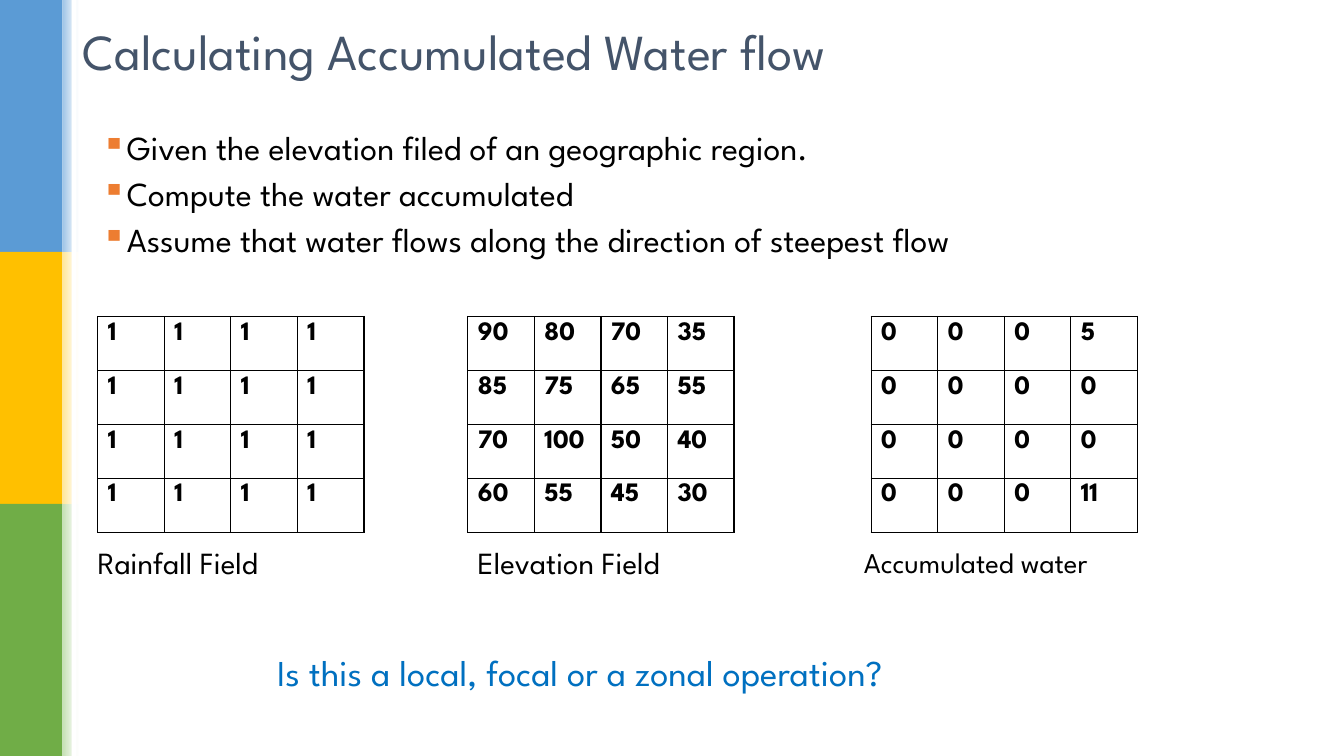
from pptx import Presentation
from pptx import util as u
from pptx.dml.color import RGBColor
from pptx.enum import shapes, text
from pptx.oxml.ns import qn
from lxml import etree

FONT = "League Spartan"
BLACK, WHITE = "000000", "FFFFFF"
BANDS = [("5B9BD5", "9DC3E6"), ("FFC000", "FFE699"), ("70AD47", "C5E0B4")]
BULLETS = [
    "Given the elevation filed of an geographic region.",
    "Compute the water accumulated",
    "Assume that water flows along the direction of steepest flow",
]
RAINFALL = [[1] * 4 for _ in range(4)]
ELEVATION = [[90, 80, 70, 35], [85, 75, 65, 55], [70, 100, 50, 40], [60, 55, 45, 30]]
ACCUMULATED = [[0, 0, 0, 5], [0] * 4, [0] * 4, [0, 0, 0, 11]]


def colour(value):
    return RGBColor.from_string(value)


def inches(box):
    return [u.Inches(length) for length in box]


def add_span(para, wording, size, ink=BLACK, bold=False):
    span = para.add_run()
    span.text = wording
    span.font.name = FONT
    span.font.size = u.Pt(size)
    span.font.bold = bold
    span.font.color.rgb = colour(ink)


def add_rectangle(page, box, fill, fade=None):
    bar = page.shapes.add_shape(shapes.MSO_SHAPE.RECTANGLE, *inches(box))
    bar.shadow.inherit = False
    bar.line.fill.background()
    if fade:
        bar.fill.gradient()
        bar.fill.gradient_angle = 0
        for stop, shade in zip(bar.fill.gradient_stops, (fill, fade)):
            stop.color.rgb = colour(shade)
    else:
        bar.fill.solid()
        bar.fill.fore_color.rgb = colour(fill)


def add_sidebar(page, box):
    left, top, width, height = box
    band_height = height / len(BANDS)
    for index, (solid, pale) in enumerate(BANDS):
        band_top = top + index * band_height
        add_rectangle(page, (left, band_top, width, band_height), solid)
        add_rectangle(page, (left + width, band_top, 0.16, band_height), pale, WHITE)
    add_rectangle(page, (left + width + 0.09, top, 0.05, height), WHITE)


def add_title(page, box, wording):
    title = page.shapes.title
    title.left, title.top, title.width, title.height = inches(box)
    frame = title.text_frame
    frame.vertical_anchor = text.MSO_ANCHOR.MIDDLE
    para = frame.paragraphs[0]
    para.alignment = text.PP_ALIGN.LEFT
    add_span(para, wording, 36, "44546A")


def add_text(page, box, lines, size, ink=BLACK, spacing=0.9, bulleted=False):
    frame = page.shapes.add_textbox(*inches(box)).text_frame
    frame.word_wrap = True
    for index, line in enumerate(lines):
        para = frame.paragraphs[0] if index == 0 else frame.add_paragraph()
        para.line_spacing = spacing
        if index:
            para.space_before = u.Pt(0.3 * size)
        if bulleted:
            add_bullet(para)
        add_span(para, line, size, ink)


def add_bullet(para):
    properties = para._p.get_or_add_pPr()
    properties.set("marL", str(u.Inches(0.25)))
    properties.set("indent", str(-u.Inches(0.25)))
    tint = etree.SubElement(properties, qn("a:buClr"))
    etree.SubElement(tint, qn("a:srgbClr"), val="ED7D31")
    etree.SubElement(properties, qn("a:buChar"), char="▪")


def add_borders(cell):
    properties = cell._tc.get_or_add_tcPr()
    for position, side in enumerate(("a:lnL", "a:lnR", "a:lnT", "a:lnB")):
        line = etree.Element(qn(side), w=str(u.Pt(1)))
        fill = etree.SubElement(line, qn("a:solidFill"))
        etree.SubElement(fill, qn("a:srgbClr"), val=BLACK)
        properties.insert(position, line)


def add_field(page, box, values):
    grid = page.shapes.add_table(len(values), len(values[0]), *inches(box)).table
    grid.first_row = grid.horz_banding = False
    for row, numbers in enumerate(values):
        for column, number in enumerate(numbers):
            cell = grid.cell(row, column)
            cell.fill.solid()
            cell.fill.fore_color.rgb = colour(WHITE)
            add_borders(cell)
            add_span(cell.text_frame.paragraphs[0], str(number), 19, bold=True)


def main():
    deck = Presentation()
    deck.slide_width, deck.slide_height = u.Inches(13.33), u.Inches(7.5)
    page = deck.slides.add_slide(deck.slide_layouts[5])

    # Sidebar, title and bullets
    add_sidebar(page, (0, 0, 0.62, 7.5))
    add_title(page, (0.72, 0.08, 10.48, 0.84), "Calculating Accumulated Water flow")
    add_text(page, (0.91, 1.25, 10.77, 1.41), BULLETS, 24, bulleted=True)

    # Fields with their labels
    for left, values in ((0.97, RAINFALL), (4.64, ELEVATION), (8.64, ACCUMULATED)):
        add_field(page, (left, 3.14, 2.64, 2.14), values)
    add_text(page, (0.87, 5.42, 2.84, 0.43), ["Rainfall Field"], 22, spacing=0.8)
    add_text(page, (4.64, 5.42, 2.84, 0.43), ["Elevation Field"], 22, spacing=0.8)
    add_text(page, (8.47, 5.4, 2.97, 0.43), ["Accumulated water"], 20.4)

    # Closing question
    question = "Is this a local, focal or a zonal operation?"
    add_text(page, (2.65, 6.45, 7.47, 0.71), [question], 26, "0070C0")
    deck.save("out.pptx")


if __name__ == "__main__":
    main()
